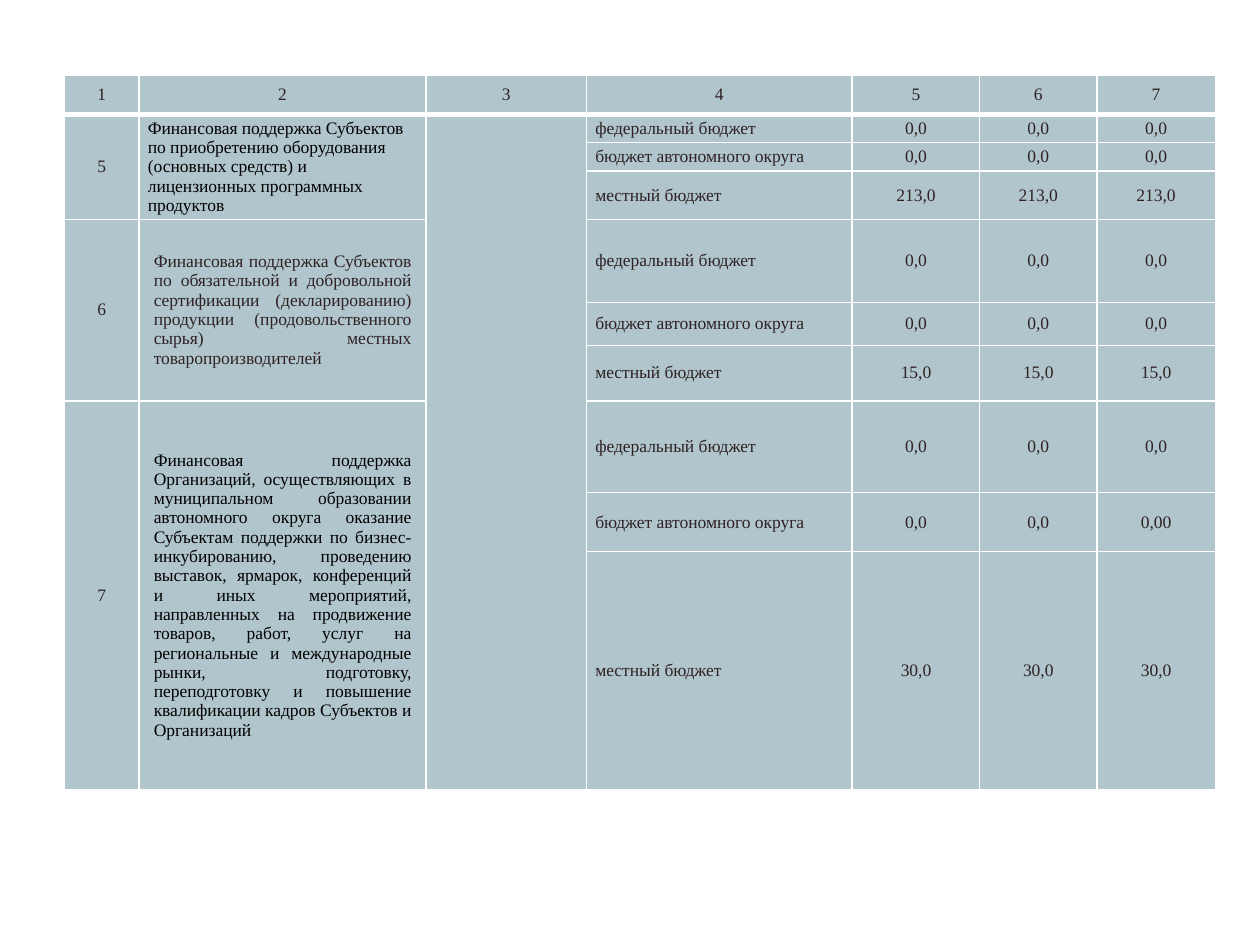
from lxml import etree
from pptx import Presentation
from pptx.dml.color import RGBColor
from pptx.enum.text import MSO_ANCHOR, PP_ALIGN
from pptx.util import Cm, Pt

MID = MSO_ANCHOR.MIDDLE
LEFT, CENTER, FULL = PP_ALIGN.LEFT, PP_ALIGN.CENTER, PP_ALIGN.JUSTIFY
NS = "http://schemas.openxmlformats.org/drawingml/2006/main"
DARK, BLACK, WHITE, BLUE = "2E2224", "000000", "FFFFFF", "B1C5CC"


def write(cell, text, align=CENTER, color=DARK, side=0.18):
    cell.vertical_anchor = MID
    cell.margin_left = cell.margin_right = Cm(side)
    cell.margin_top = cell.margin_bottom = Cm(0)
    para = cell.text_frame.paragraphs[0]
    para.alignment = align
    run = para.add_run()
    run.text = text
    run.font.size = Pt(10)
    run.font.name = "Times New Roman"
    run.font.color.rgb = RGBColor.from_string(color)


def border(cell, side, width):
    props = cell._tc.get_or_add_tcPr()
    line = etree.SubElement(props, f"{{{NS}}}ln{side}", w=str(Pt(width)))
    fill = etree.SubElement(line, f"{{{NS}}}solidFill")
    etree.SubElement(fill, f"{{{NS}}}srgbClr", val=WHITE)


# Content: number, measure, format of the measure, sums by budget
budgets = ["федеральный бюджет", "бюджет автономного округа", "местный бюджет"]
zeros = ["0,0"] * 3
groups = [
    ("5", "Финансовая поддержка Субъектов по приобретению оборудования "
     "(основных средств) и лицензионных программных продуктов",
     dict(align=LEFT, color=BLACK),
     [zeros, zeros, ["213,0"] * 3]),
    ("6", "Финансовая поддержка Субъектов по обязательной и добровольной "
     "сертификации (декларированию) продукции (продовольственного сырья) "
     "местных товаропроизводителей",
     dict(align=FULL, side=0.3),
     [zeros, zeros, ["15,0"] * 3]),
    ("7", "Финансовая поддержка Организаций, осуществляющих в муниципальном "
     "образовании автономного округа оказание Субъектам поддержки по "
     "бизнес-инкубированию, проведению выставок, ярмарок, конференций и иных "
     "мероприятий, направленных на продвижение товаров, работ, услуг на "
     "региональные и международные рынки, подготовку, переподготовку и "
     "повышение квалификации кадров Субъектов и Организаций",
     dict(align=FULL, color=BLACK, side=0.3),
     [zeros, ["0,0", "0,0", "0,00"], ["30,0"] * 3]),
]
widths = [1.5, 5.79, 3.23, 5.36, 2.57, 2.36, 2.39]
heights = [0.79, 0.56, 0.58, 0.97, 1.68, 0.86, 1.12, 1.85, 1.19, 4.8]

# Slide
deck = Presentation()
deck.slide_width, deck.slide_height = Cm(25.4), Cm(19.05)
slide = deck.slides.add_slide(deck.slide_layouts[6])

# Table grid
frame = slide.shapes.add_table(len(heights), len(widths), Cm(1.3), Cm(1.52),
                               Cm(sum(widths)), Cm(sum(heights)))
table = frame.table
table.horz_banding = False
table.first_row = False
for col, width in zip(table.columns, widths):
    col.width = Cm(width)
for row, height in zip(table.rows, heights):
    row.height = Cm(height)

# Borders and fills, with a thick line under the header
for r, row in enumerate(table.rows):
    for cell in row.cells:
        for side in "LRTB":
            thick = (r, side) in [(0, "B"), (1, "T")]
            border(cell, side, 3 if thick else 1)
        cell.fill.solid()
        cell.fill.fore_color.rgb = RGBColor.from_string(BLUE)

# Header
for c in range(len(widths)):
    write(table.cell(0, c), str(c + 1))

# Groups of three budget rows
table.cell(1, 2).merge(table.cell(len(heights) - 1, 2))
for g, (number, measure, style, sums) in enumerate(groups):
    top = 1 + g * len(budgets)
    for c in (0, 1):
        table.cell(top, c).merge(table.cell(top + len(budgets) - 1, c))
    write(table.cell(top, 0), number)
    write(table.cell(top, 1), measure, **style)
    for r, (budget, values) in enumerate(zip(budgets, sums), top):
        write(table.cell(r, 3), budget, align=LEFT)
        for c, value in enumerate(values, 4):
            write(table.cell(r, c), value)

deck.save("out.pptx")
